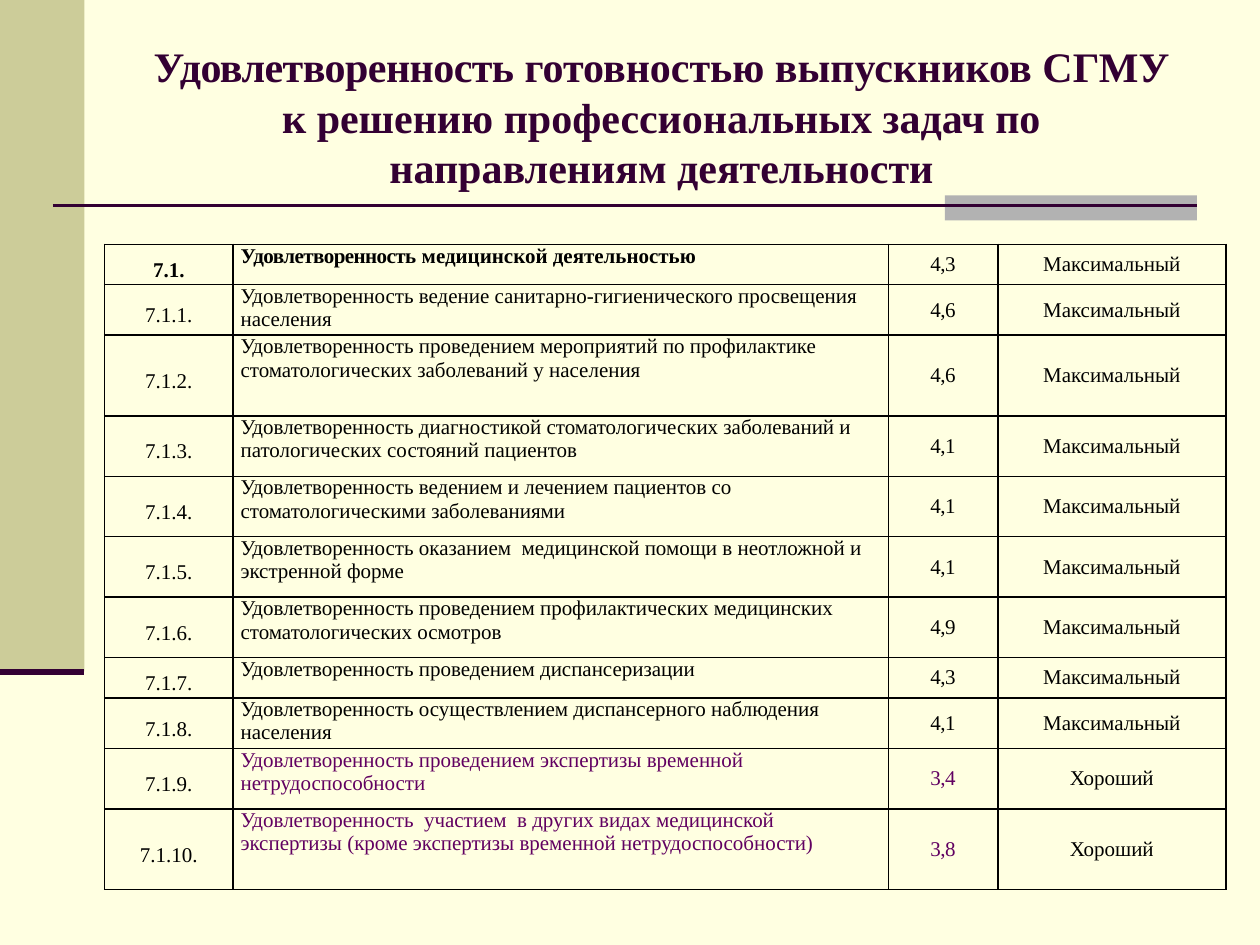
from typing import NamedTuple

from lxml import etree
from pptx import Presentation
from pptx import util as u
from pptx.dml.color import RGBColor
from pptx.enum import shapes, text
from pptx.oxml import ns

CREAM = RGBColor(0xFF, 0xFF, 0xE1)
KHAKI = RGBColor(0xCC, 0xCC, 0x99)
GRAY = RGBColor(0xB2, 0xB2, 0xB2)
PLUM = RGBColor(0x33, 0x00, 0x33)
PURPLE = RGBColor(0x61, 0x00, 0x61)
BLACK = RGBColor(0, 0, 0)

FONT = "Times New Roman"
TIGHT = -0.3
ROW_UNIT = 0.16
COLUMN_WIDTHS = (1.02, 5.2, 0.87, 1.81)
CENTER, LEFT = text.PP_ALIGN.CENTER, text.PP_ALIGN.LEFT
MIDDLE, TOP = text.MSO_ANCHOR.MIDDLE, text.MSO_ANCHOR.TOP


class Span(NamedTuple):
    words: str
    color: RGBColor = BLACK
    bold: bool = False
    spacing: float = 0
    size: float = 12


class Rating(NamedTuple):
    units: int
    subject: str
    score: str
    level: str = "Максимальный"
    color: RGBColor = BLACK


RATINGS = (
    Rating(2, "Удовлетворенность медицинской деятельностью", "4,3"),
    Rating(2, "Удовлетворенность ведение санитарно-гигиенического просвещения населения", "4,6"),
    Rating(4, "Удовлетворенность проведением мероприятий по профилактике "
              "стоматологических заболеваний у населения", "4,6"),
    Rating(3, "Удовлетворенность диагностикой стоматологических заболеваний и "
              "патологических состояний пациентов", "4,1"),
    Rating(3, "Удовлетворенность ведением и лечением пациентов со "
              "стоматологическими заболеваниями", "4,1"),
    Rating(3, "Удовлетворенность оказанием  медицинской помощи в неотложной и "
              "экстренной форме", "4,1"),
    Rating(3, "Удовлетворенность проведением профилактических медицинских  "
              "стоматологических осмотров", "4,9"),
    Rating(2, "Удовлетворенность проведением диспансеризации", "4,3"),
    Rating(2, "Удовлетворенность осуществлением диспансерного наблюдения населения", "4,1"),
    Rating(3, "Удовлетворенность проведением экспертизы временной "
              "нетрудоспособности", "3,4", "Хороший", PURPLE),
    Rating(4, "Удовлетворенность  участием  в других видах медицинской экспертизы "
              "(кроме экспертизы временной нетрудоспособности)", "3,8", "Хороший", PURPLE),
)


def add_bar(page, left: float, top: float, width: float, height: float, color: RGBColor) -> None:
    bar = page.shapes.add_shape(shapes.MSO_SHAPE.RECTANGLE,
                                *map(u.Inches, (left, top, width, height)))
    bar.shadow.inherit = False
    bar.fill.solid()
    bar.fill.fore_color.rgb = color
    bar.line.fill.background()


def add_rule(page, left: float, right: float, y: float, weight: float) -> None:
    rule = page.shapes.add_connector(shapes.MSO_CONNECTOR.STRAIGHT,
                                     *map(u.Inches, (left, y, right, y)))
    rule.line.color.rgb = PLUM
    rule.line.width = u.Pt(weight)
    etree.SubElement(rule._element.spPr, ns.qn("a:effectLst"))


def write_spans(para, spans: list[Span]) -> None:
    for span in spans:
        run = para.add_run()
        run.text = span.words
        run.font.name = FONT
        run.font.size = u.Pt(span.size)
        run.font.bold = span.bold
        run.font.color.rgb = span.color
        if span.spacing:
            run._r.get_or_add_rPr().set("spc", str(round(span.spacing * 100)))


def tight_start(words: str, **style) -> list[Span]:
    """Split off the first word and set it with tighter letter spacing."""
    first, rest = words.split(" ", 1)
    return [Span(first, spacing=TIGHT, **style), Span(" " + rest, **style)]


def add_title(page) -> None:
    box = page.shapes.add_textbox(*map(u.Inches, (1, 0.3, 8.5, 1.25)))
    frame = box.text_frame
    frame.word_wrap = True
    frame.vertical_anchor = MIDDLE
    para = frame.paragraphs[0]
    para.alignment = CENTER
    write_spans(para, tight_start(
        "Удовлетворенность готовностью выпускников СГМУ к решению "
        "профессиональных задач по направлениям деятельности",
        color=PLUM, bold=True, size=24))


def draw_borders(cell) -> None:
    """Put solid black lines on all four sides, ahead of the cell's fill."""
    properties = cell._tc.get_or_add_tcPr()
    for place, side in enumerate(("a:lnL", "a:lnR", "a:lnT", "a:lnB")):
        line = etree.Element(ns.qn(side), w=str(u.Pt(1)))
        fill = etree.SubElement(line, ns.qn("a:solidFill"))
        etree.SubElement(fill, ns.qn("a:srgbClr"), val=str(BLACK))
        properties.insert(place, line)


def fill_cell(cell, spans: list[Span], column: int) -> None:
    is_subject = column == 1
    cell.fill.background()
    draw_borders(cell)
    cell.margin_left = cell.margin_right = u.Inches(0.06)
    cell.margin_top = cell.margin_bottom = 0
    cell.vertical_anchor = TOP if is_subject else MIDDLE
    para = cell.text_frame.paragraphs[0]
    para.alignment = LEFT if is_subject else CENTER
    para.space_before = u.Pt(3)
    if column == 0:
        para.line_spacing = 1.5
    write_spans(para, spans)


def add_ratings(page) -> None:
    height = ROW_UNIT * sum(rating.units for rating in RATINGS)
    table = page.shapes.add_table(
        len(RATINGS), len(COLUMN_WIDTHS),
        *map(u.Inches, (0.83, 1.94, sum(COLUMN_WIDTHS), height))).table
    table.first_row = table.horz_banding = False
    for column, width in zip(table.columns, COLUMN_WIDTHS):
        column.width = u.Inches(width)
    for index, rating in enumerate(RATINGS):
        table.rows[index].height = u.Inches(ROW_UNIT * rating.units)
        is_heading = index == 0
        number = "7.1." if is_heading else f"7.1.{index}."
        subject = (tight_start(rating.subject, bold=True) if is_heading
                   else [Span(rating.subject, rating.color)])
        contents = (
            [Span(number, bold=is_heading)],
            subject,
            [Span(rating.score, rating.color, spacing=TIGHT)],
            [Span(rating.level)],
        )
        for column, spans in enumerate(contents):
            fill_cell(table.cell(index, column), spans, column)


def main() -> None:
    deck = Presentation()
    deck.slide_width, deck.slide_height = u.Inches(10), u.Inches(7.5)
    page = deck.slides.add_slide(deck.slide_layouts[6])
    page.background.fill.solid()
    page.background.fill.fore_color.rgb = CREAM
    add_bar(page, 0, 0, 0.67, 5.33, KHAKI)
    add_bar(page, 7.5, 1.55, 2, 0.2, GRAY)
    add_rule(page, 0.42, 9.5, 1.63, 1.5)
    add_rule(page, 0, 0.67, 5.33, 3.5)
    add_title(page)
    add_ratings(page)
    deck.save("out.pptx")


if __name__ == "__main__":
    main()
